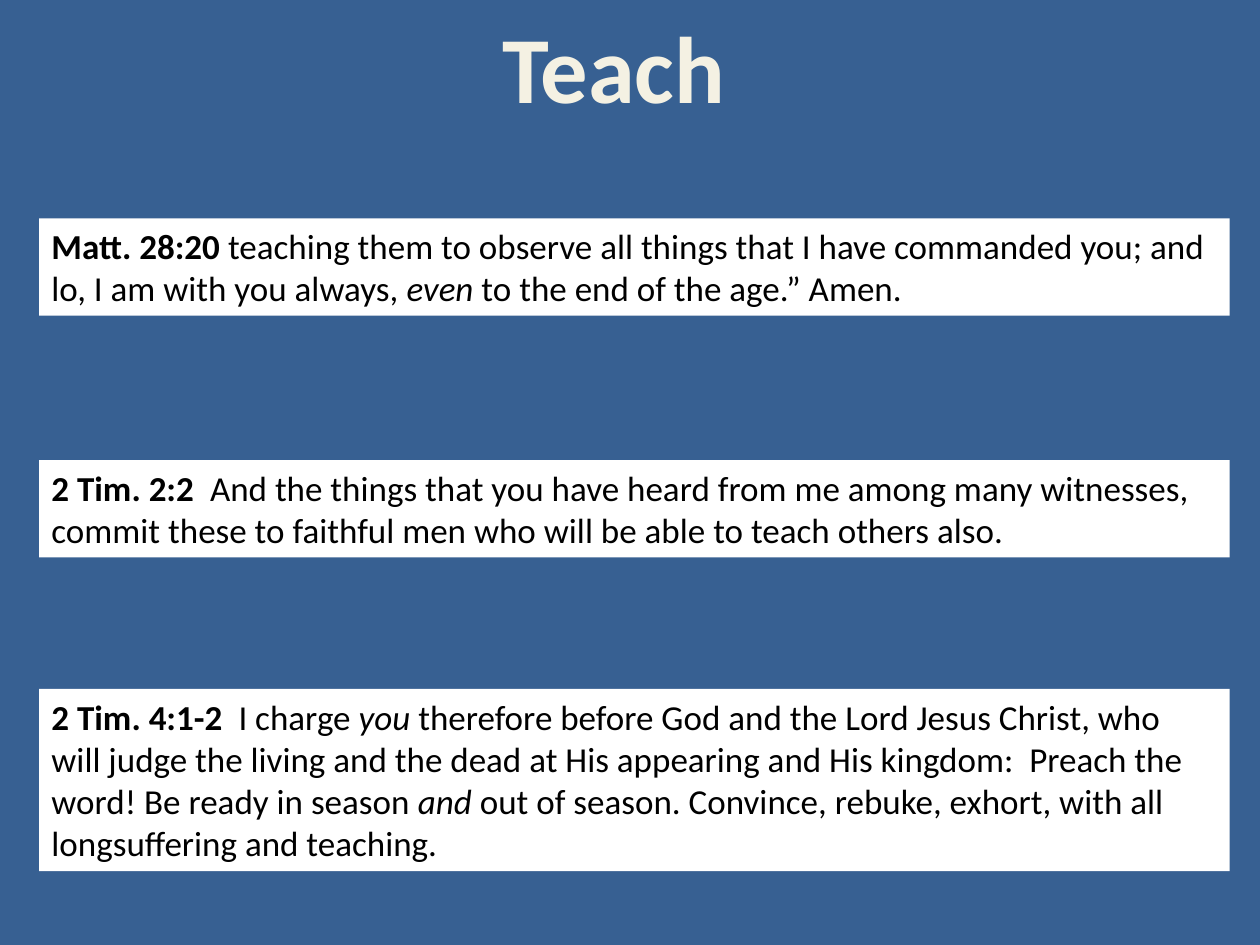
from dataclasses import dataclass

from lxml.etree import SubElement
from pptx import Presentation
from pptx.dml.color import RGBColor
from pptx.enum.shapes import MSO_SHAPE
from pptx.enum.text import MSO_ANCHOR, MSO_AUTO_SIZE, PP_ALIGN
from pptx.oxml.ns import qn
from pptx.slide import Slide
from pptx.text.text import Font
from pptx.util import Inches, Pt


@dataclass(frozen=True)
class Theme:
    """Colours, typeface and type sizes of the slide."""

    background: str = "376092"
    title: str = "F4F1E3"
    title_outline: str = "054697"
    panel: str = "FFFFFF"
    body: str = "000000"
    typeface: str = "Calibri"
    title_size: int = 54
    body_size: int = 20


@dataclass(frozen=True)
class Phrase:
    """A stretch of verse text in one style."""

    text: str
    italic: bool = False


@dataclass(frozen=True)
class Verse:
    """A scripture panel: its top and height as shares of the slide height."""

    top: float
    height: float
    reference: str
    phrases: tuple[Phrase, ...]


THEME = Theme()
WIDTH, HEIGHT = Inches(10), Inches(7.5)
PANEL_LEFT, PANEL_WIDTH = 0.031, 0.945
TWO_LINES, FOUR_LINES = 0.103, 0.193

VERSES = (
    Verse(0.231, TWO_LINES, "Matt. 28:20 ", (
        Phrase("teaching them to observe all things that I have commanded you; "
               "and lo, I am with you always, "),
        Phrase("even", italic=True),
        Phrase(" to the end of the age.” Amen."),
    )),
    Verse(0.487, TWO_LINES, "2 Tim. 2:2  ", (
        Phrase("And the things that you have heard from me among many witnesses, "
               "commit these to faithful men who will be able to teach others also."),
    )),
    Verse(0.729, FOUR_LINES, "2 Tim. 4:1-2  ", (
        Phrase("I charge "),
        Phrase("you", italic=True),
        Phrase(" therefore before God and the Lord Jesus Christ, who will judge the "
               "living and the dead at His appearing and His kingdom:  Preach the "
               "word! Be ready in season "),
        Phrase("and", italic=True),
        Phrase(" out of season. Convince, rebuke, exhort, with all longsuffering "
               "and teaching."),
    )),
)


def style_font(font: Font, size: int, color: str, bold: bool = False,
               italic: bool = False) -> None:
    """Apply the theme typeface with the given look."""
    font.name = THEME.typeface
    font.size = Pt(size)
    font.color.rgb = RGBColor.from_string(color)
    font.bold = bold
    font.italic = italic


def draw_title(slide: Slide, text: str) -> None:
    """Draw the outlined heading at the top of the slide."""
    box = slide.shapes.add_textbox(int(WIDTH * 0.384), int(HEIGHT * 0.003),
                                   int(WIDTH * 0.206), int(HEIGHT * 0.135))
    frame = box.text_frame
    frame.text = text
    frame.word_wrap = False
    frame.auto_size = MSO_AUTO_SIZE.SHAPE_TO_FIT_TEXT
    paragraph = frame.paragraphs[0]
    paragraph.alignment = PP_ALIGN.CENTER
    run = paragraph.runs[0]
    style_font(run.font, THEME.title_size, THEME.title, bold=True)
    properties = run._r.get_or_add_rPr()
    outline = SubElement(properties, qn("a:ln"), w=str(Pt(1)))
    fill = SubElement(outline, qn("a:solidFill"))
    SubElement(fill, qn("a:srgbClr"), val=THEME.title_outline)
    properties.insert(0, outline)


def draw_verse(slide: Slide, verse: Verse) -> None:
    """Draw a panel holding a bold reference and its verse."""
    panel = slide.shapes.add_shape(
        MSO_SHAPE.RECTANGLE, int(WIDTH * PANEL_LEFT), int(HEIGHT * verse.top),
        int(WIDTH * PANEL_WIDTH), int(HEIGHT * verse.height))
    panel.shadow.inherit = False
    panel.fill.solid()
    panel.fill.fore_color.rgb = RGBColor.from_string(THEME.panel)
    panel.line.fill.background()
    frame = panel.text_frame
    frame.word_wrap = True
    frame.auto_size = MSO_AUTO_SIZE.SHAPE_TO_FIT_TEXT
    frame.vertical_anchor = MSO_ANCHOR.TOP
    paragraph = frame.paragraphs[0]
    paragraph.text = verse.reference
    paragraph.alignment = PP_ALIGN.LEFT
    style_font(paragraph.runs[0].font, THEME.body_size, THEME.body, bold=True)
    for phrase in verse.phrases:
        run = paragraph.add_run()
        run.text = phrase.text
        style_font(run.font, THEME.body_size, THEME.body, italic=phrase.italic)


def main() -> None:
    """Build and save the slide."""
    presentation = Presentation()
    presentation.slide_width, presentation.slide_height = WIDTH, HEIGHT
    slide = presentation.slides.add_slide(presentation.slide_layouts[6])
    slide.background.fill.solid()
    slide.background.fill.fore_color.rgb = RGBColor.from_string(THEME.background)
    draw_title(slide, "Teach")
    for verse in VERSES:
        draw_verse(slide, verse)
    presentation.save("out.pptx")


if __name__ == "__main__":
    main()
